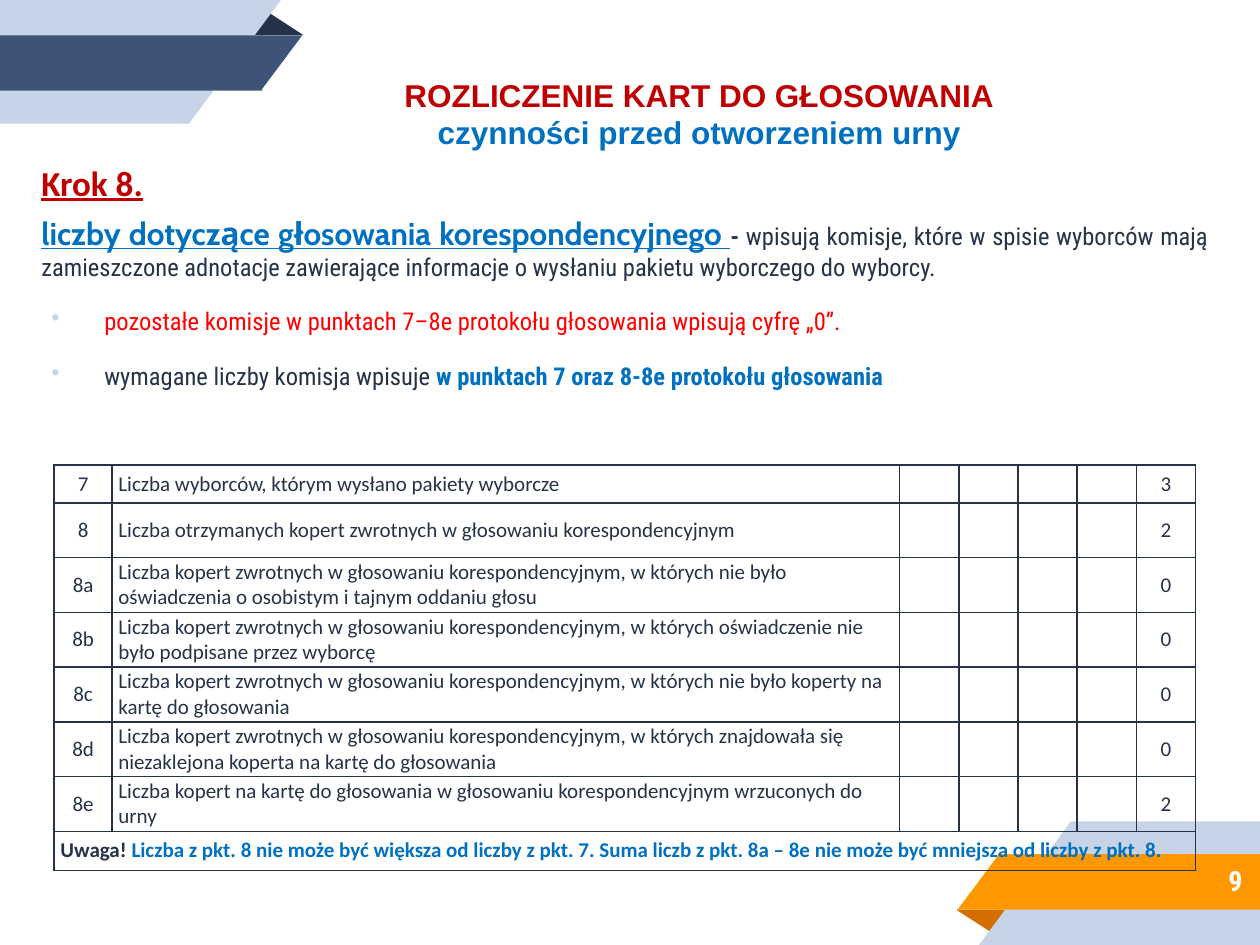
from dataclasses import dataclass

from lxml import etree
from pptx import Presentation
from pptx.dml.color import RGBColor
from pptx.enum.shapes import MSO_SHAPE
from pptx.enum.text import MSO_ANCHOR, MSO_AUTO_SIZE, PP_ALIGN
from pptx.oxml.ns import qn
from pptx.util import Inches, Pt

RECT, CORNER, FOLD = MSO_SHAPE.RECTANGLE, MSO_SHAPE.RIGHT_TRIANGLE, MSO_SHAPE.ISOSCELES_TRIANGLE
LEFT, CENTER, RIGHT, JUSTIFY = PP_ALIGN.LEFT, PP_ALIGN.CENTER, PP_ALIGN.RIGHT, PP_ALIGN.JUSTIFY
TOP, MIDDLE = MSO_ANCHOR.TOP, MSO_ANCHOR.MIDDLE
NO_FIT, GROW = MSO_AUTO_SIZE.NONE, MSO_AUTO_SIZE.SHAPE_TO_FIT_TEXT


@dataclass(frozen=True)
class Theme:
    """Colours, fonts and type sizes of the slide."""
    ink: str = "263248"
    navy: str = "3F5378"
    pale: str = "C7D3E6"
    orange: str = "FF9800"
    rust: str = "D26F00"
    white: str = "FFFFFF"
    crimson: str = "C00000"
    red: str = "FF0000"
    blue: str = "0070C0"
    title_font: str = "Arial"
    step_font: str = "Calibri"
    lead_font: str = "Cabin"
    body_font: str = "Roboto Condensed"
    step_size: int = 20
    title_size: int = 18
    number_size: int = 16
    body_size: int = 14
    table_size: int = 12


T = Theme()
WIDTH, HEIGHT = Inches(10), Inches(7.5)
COLUMNS = [4.6, 62.5] + [4.7] * 5
RIBBON = [
    (FOLD, 19.8, 1.2, 4.3, 2.53, T.ink, T.rust),
    (RECT, 0, 0, 15, 13.07, T.pale, T.pale),
    (CORNER, 15, 0, 7.3, 13.07, T.pale, T.pale),
    (RECT, 0, 3.73, 20.8, 5.87, T.navy, T.orange),
    (CORNER, 20.7, 3.73, 3.3, 5.87, T.navy, T.orange),
]
ENVELOPES = "Liczba kopert zwrotnych w głosowaniu korespondencyjnym, w których "
PACKAGES = [("7", "Liczba wyborców, którym wysłano pakiety wyborcze", "3")]
RETURNS = [
    ("8", "Liczba otrzymanych kopert zwrotnych w głosowaniu korespondencyjnym", "2"),
    ("8a", ENVELOPES + "nie było oświadczenia o osobistym i tajnym oddaniu głosu", "0"),
    ("8b", ENVELOPES + "oświadczenie nie było podpisane przez wyborcę", "0"),
    ("8c", ENVELOPES + "nie było koperty na kartę do głosowania", "0"),
    ("8d", ENVELOPES + "znajdowała się niezaklejona koperta na kartę do głosowania", "0"),
    ("8e", "Liczba kopert na kartę do głosowania w głosowaniu korespondencyjnym "
           "wrzuconych do urny", "2"),
]
WARNING = ("Liczba z pkt. 8 nie może być większa od liczby z pkt. 7. "
           "Suma liczb z pkt. 8a – 8e nie może być mniejsza od liczby z pkt. 8.")


def box(x, y, w, h):
    """Turn percentages of the slide's size into lengths."""
    return (int(WIDTH * x / 100), int(HEIGHT * y / 100),
            int(WIDTH * w / 100), int(HEIGHT * h / 100))


def write(p, *runs, size=T.body_size, name=T.body_font, align=LEFT):
    """Fill a paragraph with runs of (text, colour, bold)."""
    p.alignment = align
    for text, color, bold in runs:
        r = p.add_run()
        r.text = text
        r.font.size, r.font.name, r.font.bold = Pt(size), name, bold
        r.font.color.rgb = RGBColor.from_string(color)


def frame(sp, anchor, fit=NO_FIT, top=0.1, pad=0.1):
    """Set up and return the text frame of a shape."""
    tf = sp.text_frame
    tf.word_wrap, tf.auto_size, tf.vertical_anchor = True, fit, anchor
    tf.margin_left = tf.margin_right = Inches(0.1)
    tf.margin_top, tf.margin_bottom = Inches(top), Inches(pad)
    return tf


def add_ribbon(s, turned):
    """Draw the folded corner ribbon, or its half-turn about the slide's centre."""
    for kind, x, y, w, h, color, turned_color in RIBBON:
        if turned:
            x, y, color = 100 - x - w, 100 - y - h, turned_color
        sp = s.shapes.add_shape(kind, *box(x, y, w, h))
        sp.shadow.inherit = False
        sp.fill.solid()
        sp.fill.fore_color.rgb = RGBColor.from_string(color)
        sp.line.fill.background()
        if kind == FOLD:
            sp.adjustments[0] = 0.32
            sp.rotation = 180 if turned else 0
        else:
            sp.rotation = 0 if turned else 180
            sp.element.spPr.find(qn("a:xfrm")).set("flipH", "1")


def add_title(s):
    """Format the title placeholder with its two centred lines."""
    sp = s.shapes.title
    sp.left, sp.top, sp.width, sp.height = box(16.1, 7.33, 78.8, 9.47)
    tf = frame(sp, TOP, GROW, 0.05, 0.05)
    lines = (("ROZLICZENIE KART DO GŁOSOWANIA", T.crimson),
             ("czynności przed otworzeniem urny", T.blue))
    for i, (text, color) in enumerate(lines):
        p = tf.add_paragraph() if i else tf.paragraphs[0]
        write(p, (text, color, True), size=T.title_size, name=T.title_font, align=CENTER)


def add_bullet(p):
    """Give a paragraph a pale bullet with a hanging indent."""
    p.line_spacing = 1.5
    pPr = p._p.get_or_add_pPr()
    pPr.set("marL", str(Inches(0.5)))
    pPr.set("indent", str(Inches(-0.42)))
    color = etree.SubElement(pPr, qn("a:buClr"))
    etree.SubElement(color, qn("a:srgbClr"), val=T.pale)
    etree.SubElement(pPr, qn("a:buChar"), char="•")


def add_body(s):
    """Write the step heading, its explanation and the two bullets."""
    tf = frame(s.shapes.add_textbox(*box(2.3, 16.67, 94.6, 28)), TOP, top=0.03)
    step, lead, *bullets = [tf.paragraphs[0]] + [tf.add_paragraph() for _ in range(3)]
    for p in tf.paragraphs:
        p.space_before = Pt(6)
    write(step, ("Krok 8.", T.crimson, True), size=T.step_size, name=T.step_font)
    write(lead, ("liczby dotyczące głosowania korespondencyjnego ", T.blue, True),
          size=T.title_size, name=T.lead_font)
    for p in (step, lead):
        p.runs[0].font.underline = True
    write(lead, ("- ", T.ink, True),
          ("wpisują komisje, które w spisie wyborców mają zamieszczone adnotacje zawierające "
           "informacje o wysłaniu pakietu wyborczego do wyborcy.", T.ink, False), align=JUSTIFY)
    for p in bullets:
        add_bullet(p)
    write(bullets[0], ("pozostałe komisje w punktach 7–8e protokołu głosowania "
                       "wpisują cyfrę „0”.", T.red, False))
    write(bullets[1], ("wymagane liczby komisja wpisuje ", T.ink, False),
          ("w punktach 7 oraz 8-8e protokołu głosowania", T.blue, True))


def format_cell(cell):
    """Clear the fill, tighten the margins and rule all four sides of a cell."""
    cell.fill.background()
    cell.vertical_anchor = MIDDLE
    cell.margin_left = cell.margin_right = Inches(0.05)
    cell.margin_top = cell.margin_bottom = 0
    tcPr = cell._tc.get_or_add_tcPr()
    for i, side in enumerate(("lnL", "lnR", "lnT", "lnB")):
        ln = etree.Element(qn(f"a:{side}"), w=str(Pt(1)))
        fill = etree.SubElement(ln, qn("a:solidFill"))
        etree.SubElement(fill, qn("a:srgbClr"), val=T.ink)
        tcPr.insert(i, ln)
    etree.SubElement(cell.text_frame.paragraphs[0]._p, qn("a:endParaRPr"),
                     sz=str(T.table_size * 100))


def add_form(s, top, heights, rows):
    """Add a ruled table of protocol points and return it."""
    area = box(4.3, top, sum(COLUMNS), sum(heights))
    tbl = s.shapes.add_table(len(heights), len(COLUMNS), *area).table
    tbl.first_row = tbl.horz_banding = False
    for col, width in zip(tbl.columns, COLUMNS):
        col.width = int(WIDTH * width / 100)
    for row, height in zip(tbl.rows, heights):
        row.height = int(HEIGHT * height / 100)
    for cell in tbl.iter_cells():
        format_cell(cell)
    for i, (point, label, count) in enumerate(rows):
        for j, text, align in ((0, point, CENTER), (1, label, LEFT), (6, count, CENTER)):
            write(tbl.cell(i, j).text_frame.paragraphs[0], (text, T.ink, False),
                  size=T.table_size, name=T.step_font, align=align)
    return tbl


def add_warning(tbl):
    """Merge the last row and write the warning in it."""
    last = len(tbl.rows) - 1
    cell = tbl.cell(last, 0)
    cell.merge(tbl.cell(last, len(COLUMNS) - 1))
    write(cell.text_frame.paragraphs[0], ("Uwaga! ", T.ink, True), (WARNING, T.blue, True),
          size=T.table_size, name=T.step_font)


def add_number(s):
    """Write the slide number on the orange ribbon."""
    tf = frame(s.shapes.add_textbox(*box(83.3, 90.13, 16.3, 6.13)), MIDDLE)
    write(tf.paragraphs[0], ("9", T.white, True), size=T.number_size, align=RIGHT)


def main():
    """Build and save the slide."""
    prs = Presentation()
    prs.slide_width, prs.slide_height = WIDTH, HEIGHT
    s = prs.slides.add_slide(prs.slide_layouts[5])
    for turned in (False, True):
        add_ribbon(s, turned)
    add_title(s)
    add_body(s)
    add_form(s, 49.2, [4], PACKAGES)
    add_warning(add_form(s, 53.2, [5.8] * 6 + [4.13], RETURNS))
    add_number(s)
    prs.save("out.pptx")


if __name__ == "__main__":
    main()
